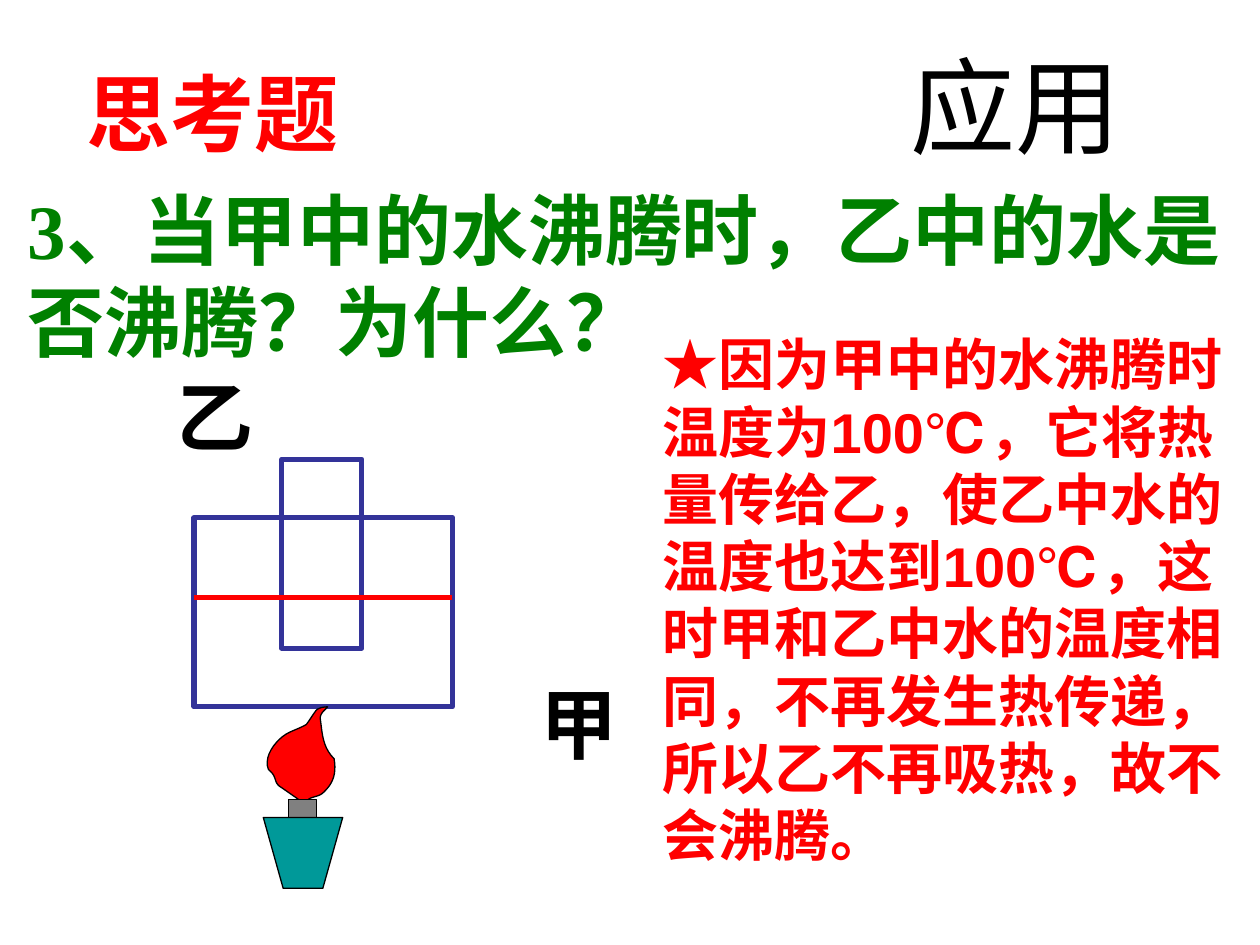
from pptx import Presentation
from pptx import util as u
from pptx.dml.color import RGBColor
from pptx.enum import shapes, text
from pptx.oxml.ns import qn
from lxml import etree

COLORS = {
    "paper": "FFFFFF", "ink": "000000", "red": "FF0000", "question": "008000",
    "glass": "333399", "wick": "808080", "lamp": "009999",
}

# Flame outline in shares of its box: start point, then cubic curves
FLAME_START = (0.59, 1)
FLAME_CURVES = [
    ((0.47, 0.94), (0.34, 0.87), (0.22, 0.81)),
    ((0.14, 0.76), (0.19, 0.71), (0.07, 0.64)),
    ((0, 0.51), (0.16, 0.35), (0.31, 0.28)),
    ((0.4, 0.24), (0.5, 0.22), (0.59, 0.18)),
    ((0.64, 0.13), (0.67, 0.09), (0.72, 0.04)),
    ((0.76, 0), (0.88, 0), (0.88, 0)),
    ((0.84, 0.04), (0.78, 0.06), (0.78, 0.12)),
    ((0.81, 0.28), (0.81, 0.41), (0.97, 0.53)),
    ((1, 0.67), (0.97, 0.77), (0.83, 0.87)),
    ((0.74, 0.94), (0.59, 0.9), (0.59, 1)),
]


def rgb(name):
    return RGBColor.from_string(COLORS[name])


def inches(*lengths):
    return [u.Inches(length) for length in lengths]


def paint(shape, fill, line, width):
    shape.shadow.inherit = False
    shape.fill.solid()
    shape.fill.fore_color.rgb = rgb(fill)
    shape.line.color.rgb = rgb(line)
    shape.line.width = u.Pt(width)


def write(holder, words, size, font, color, bold=True, wrap=True):
    frame = holder.text_frame
    frame.text = words
    frame.word_wrap = wrap
    frame.auto_size = text.MSO_AUTO_SIZE.SHAPE_TO_FIT_TEXT
    frame.vertical_anchor = text.MSO_ANCHOR.TOP
    paragraph = frame.paragraphs[0]
    paragraph.alignment = text.PP_ALIGN.LEFT
    paragraph.font.size = u.Pt(size)
    paragraph.font.name = font
    paragraph.font.bold = bold
    paragraph.font.color.rgb = rgb(color)


def add_words(slide, box, *args, **options):
    write(slide.shapes.add_textbox(*inches(*box)), *args, **options)


def add_heading(slide, box):
    heading = slide.shapes.title
    heading.left, heading.top, heading.width, heading.height = inches(*box)
    heading.fill.solid()
    heading.fill.fore_color.rgb = rgb("paper")
    write(heading, "思考题", 48, "Arial", "red")
    # Without a right inset the heading stays on one line
    heading.text_frame.margin_right = 0


def add_rect(slide, box, fill, line, width):
    rect = slide.shapes.add_shape(shapes.MSO_SHAPE.RECTANGLE, *inches(*box))
    paint(rect, fill, line, width)


def add_level(slide, left, right, y, color):
    level = slide.shapes.add_connector(
        shapes.MSO_CONNECTOR.STRAIGHT, *inches(left, y, right, y))
    level.line.color.rgb = rgb(color)
    level.line.width = u.Pt(3)
    etree.SubElement(level._element.spPr, qn("a:effectLst"))


def add_outline(slide, box, shares, fill):
    left, top, width, height = box
    points = [inches(left + x * width, top + y * height) for x, y in shares]
    builder = slide.shapes.build_freeform(*points[0])
    builder.add_line_segments(points[1:], close=True)
    paint(builder.convert_to_shape(), fill, "ink", 0.75)


def flame_points(steps=10):
    points = [FLAME_START]
    for first, second, end in FLAME_CURVES:
        start = points[-1]
        for step in range(1, steps + 1):
            t = step / steps
            s = 1 - t
            points.append(tuple(
                s**3 * a + 3 * s * s * t * b + 3 * s * t * t * c + t**3 * d
                for a, b, c, d in zip(start, first, second, end)))
    return points


def add_beakers(slide, box):
    """Outer vessel fills the box; the inner one starts higher up."""
    left, top, width, height = box
    tube_left, tube_width = left + 0.34 * width, 0.31 * width
    add_rect(slide, box, "paper", "glass", 3)
    add_rect(slide, (tube_left, top - 0.31 * height, tube_width, height),
             "paper", "glass", 3)
    # Vessel rim crossing the tube, then the water level
    add_level(slide, left + 0.19 * width, left + 0.69 * width, top, "glass")
    add_level(slide, left, left + width, top + 0.42 * height, "red")


def add_lamp(slide, box):
    left, top, width, height = box
    add_outline(slide, (left, top, 0.92 * width, 0.54 * height),
                flame_points(), "red")
    add_rect(slide, (left + 0.32 * width, top + 0.51 * height,
                     0.35 * width, 0.17 * height), "wick", "ink", 0.75)
    add_outline(slide, (left, top + 0.61 * height, width, 0.39 * height),
                [(0, 0), (0.25, 1), (0.75, 1), (1, 0)], "lamp")


def add_apparatus(slide, left, top):
    add_beakers(slide, (left, top, 2.05, 1.5))
    add_lamp(slide, (left + 0.55, top + 1.5, 0.63, 1.44))
    for label, x, y in (("甲", 2.65, 1.21), ("乙", -0.24, -1.23)):
        add_words(slide, (left + x, top + y, 0.81, 0.83), label, 44,
                  "Times New Roman", "ink", wrap=False)


def main():
    deck = Presentation()
    deck.slide_width, deck.slide_height = inches(10, 7.5)
    slide = deck.slides.add_slide(deck.slide_layouts[5])

    add_apparatus(slide, 1.54, 4.11)
    add_words(slide, (0.12, 1.4, 9.81, 1.57),
              "3、当甲中的水沸腾时，乙中的水是否沸腾？为什么？",
              44, "Times New Roman", "question")
    add_heading(slide, (0.59, 0.44, 2.2, 0.9))
    add_words(slide, (5.16, 2.57, 4.84, 4.36),
              "★因为甲中的水沸腾时温度为100℃，它将热量传给乙，"
              "使乙中水的温度也达到100℃，这时甲和乙中水的温度相同，"
              "不再发生热传递，所以乙不再吸热，故不会沸腾。",
              32, "Arial", "red")
    add_words(slide, (7.13, 0.28, 2.48, 1.1), "应用", 60, "Montserrat", "ink",
              bold=False)
    deck.save("out.pptx")


if __name__ == "__main__":
    main()
